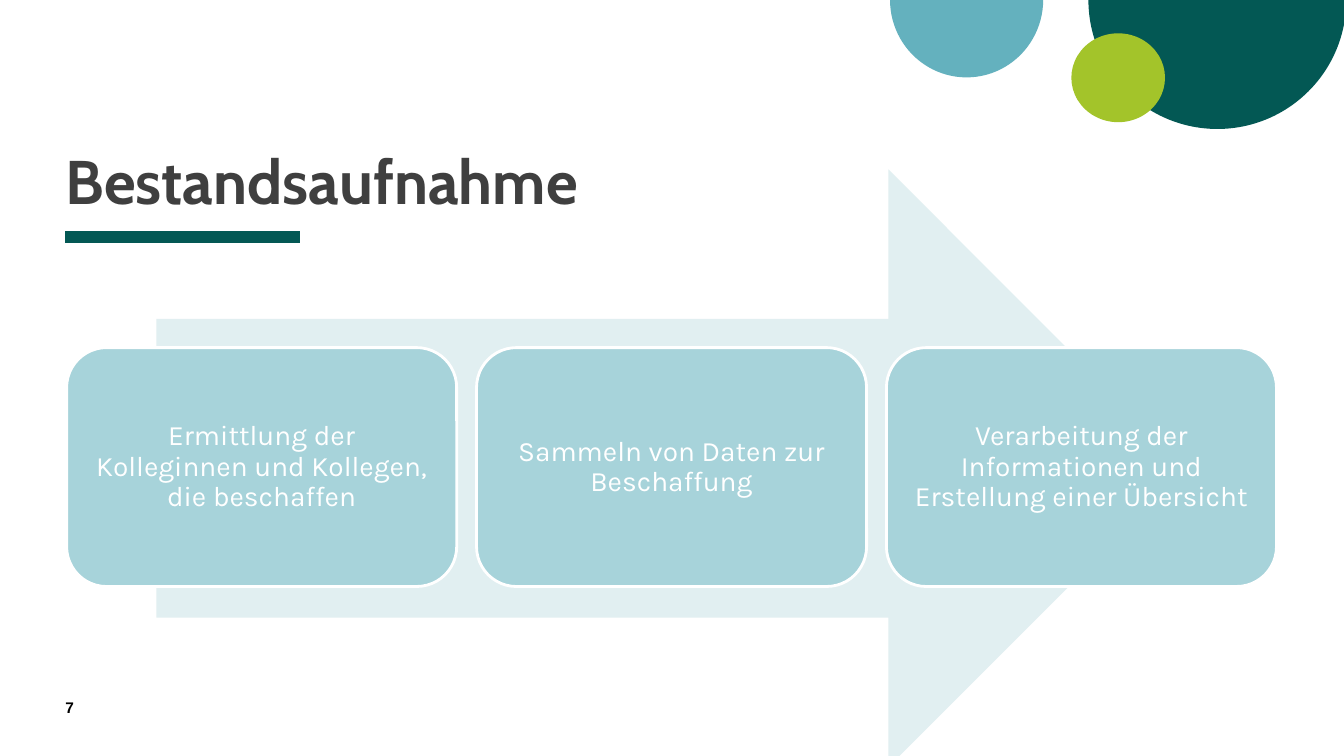
import lxml.etree
import pptx
import pptx.dml.color
import pptx.enum.shapes
import pptx.enum.text
import pptx.oxml.ns
import pptx.util

Cm = pptx.util.Cm
Pt = pptx.util.Pt
SHAPES = pptx.enum.shapes.MSO_SHAPE
ALIGN = pptx.enum.text.PP_ALIGN
ANCHOR = pptx.enum.text.MSO_ANCHOR

COLORS = {
    "dark_green": "035854",
    "blue": "64B1BE",
    "lime": "A3C42A",
    "arrow": "E1EFF1",
    "card": "A7D3DA",
    "title": "3F3F3F",
    "white": "FFFFFF",
    "black": "000000",
}

STEPS = [
    "Ermittlung der Kolleginnen und Kollegen, die beschaffen",
    "Sammeln von Daten zur Beschaffung",
    "Verarbeitung der Informationen und Erstellung einer Übersicht",
]


def color(name):
    return pptx.dml.color.RGBColor.from_string(COLORS[name])


def add_filled_shape(slide, kind, box, fill):
    shape = slide.shapes.add_shape(kind, *map(Cm, box))
    shape.shadow.inherit = False
    shape.fill.solid()
    shape.fill.fore_color.rgb = color(fill)
    shape.line.fill.background()
    return shape


def add_half_circle(slide, box, fill):
    shape = add_filled_shape(slide, SHAPES.PIE, box, fill)
    shape.adjustments[0] = 0
    shape.adjustments[1] = 108


def add_title_rule(slide):
    rule = slide.shapes.add_connector(
        pptx.enum.shapes.MSO_CONNECTOR.STRAIGHT,
        Cm(1.65), Cm(5.97), Cm(7.57), Cm(5.97))
    rule.line.color.rgb = color("dark_green")
    rule.line.width = Pt(8)
    lxml.etree.SubElement(rule._element.spPr, pptx.oxml.ns.qn("a:effectLst"))


def write_text(shape, text, font_name, size, fill, inset=0, bold=False,
               align=ALIGN.LEFT, anchor=ANCHOR.TOP, spacing=1.0):
    frame = shape.text_frame
    frame.text = text
    frame.word_wrap = True
    frame.auto_size = pptx.enum.text.MSO_AUTO_SIZE.NONE
    frame.vertical_anchor = anchor
    frame.margin_left = frame.margin_right = Cm(inset)
    frame.margin_top = frame.margin_bottom = Cm(inset)
    paragraph = frame.paragraphs[0]
    paragraph.alignment = align
    paragraph.line_spacing = spacing
    font = paragraph.runs[0].font
    font.name = font_name
    font.size = Pt(size)
    font.bold = bold
    font.color.rgb = color(fill)


def add_title(slide, text):
    title = slide.shapes.title
    title.left, title.top, title.width, title.height = map(
        Cm, (1.65, 1.04, 18.85, 4.42))
    write_text(title, text, "Cabin", 44, "title", bold=True,
               anchor=ANCHOR.BOTTOM, spacing=0.8)


def add_slide_number(slide, number):
    box = slide.shapes.add_textbox(*map(Cm, (1.65, 17.58, 1.45, 0.69)))
    write_text(box, number, "Arial", 11, "black", bold=True)


def add_step_card(slide, index, text):
    box = (1.68 + index * 10.33, 8.76, 9.83, 6.02)
    card = add_filled_shape(slide, SHAPES.ROUNDED_RECTANGLE, box, "card")
    card.adjustments[0] = 0.167
    card.line.color.rgb = color("white")
    card.line.width = Pt(2)
    write_text(card, text, "Karla", 20, "white", inset=0.33,
               align=ALIGN.CENTER, anchor=ANCHOR.MIDDLE, spacing=0.9)


def main():
    presentation = pptx.Presentation()
    presentation.slide_width = Cm(33.87)
    presentation.slide_height = Cm(19.05)
    slide = presentation.slides.add_slide(presentation.slide_layouts[5])

    add_half_circle(slide, (27.43, -3.25, 6.5, 6.5), "dark_green")
    add_title_rule(slide)
    add_half_circle(slide, (22.43, -1.96, 3.86, 3.91), "blue")
    add_filled_shape(slide, SHAPES.OVAL, (27, 0.84, 2.36, 2.24), "lime")
    add_title(slide, "Bestandsaufnahme")
    add_slide_number(slide, "7")
    add_filled_shape(slide, SHAPES.RIGHT_ARROW,
                     (3.94, 4.27, 25.98, 15.06), "arrow")
    for index, text in enumerate(STEPS):
        add_step_card(slide, index, text)

    presentation.save("out.pptx")


if __name__ == "__main__":
    main()
